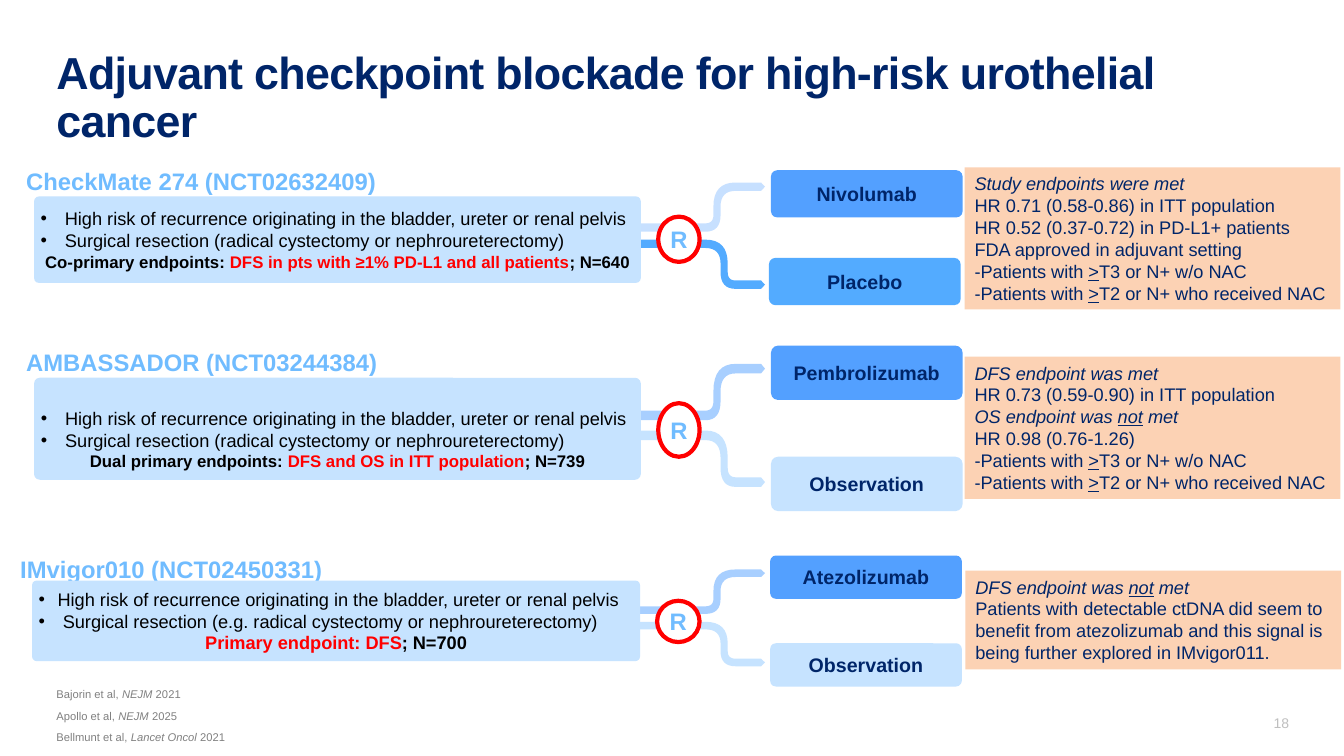
from dataclasses import dataclass

from pptx import Presentation
from pptx.dml.color import RGBColor
from pptx.enum import shapes, text
from pptx.oxml.ns import qn
from pptx.util import Cm, Pt
from lxml import etree


@dataclass(frozen=True)
class Theme:
    font: str = "Arial"
    navy: str = "002569"
    sky: str = "70BCFF"
    blue: str = "53A0FF"
    azure: str = "53ABFF"
    pale: str = "C6E3FF"
    peach: str = "FCD2B4"
    red: str = "FF0000"
    black: str = "000000"
    white: str = "FFFFFF"
    grey: str = "808080"
    silver: str = "BFBFBF"
    title: float = 32
    heading: float = 17
    arm: float = 14
    body: float = 13
    endpoint: float = 12
    number: float = 10
    reference: float = 8


T = Theme()
ALIGN = text.PP_ALIGN
ANCHOR = text.MSO_ANCHOR

RISK = "High risk of recurrence originating in the bladder, ureter or renal pelvis"
SURGERY = "Surgical resection (radical cystectomy or nephroureterectomy)"
STAGES = [["-Patients with ", (">", "u"), "T3 or N+ w/o NAC"],
          ["-Patients with ", (">", "u"), "T2 or N+ who received NAC"]]

# Lengths in cm; an arm is (name, x, y, colour), an arrow is (top, colour, alpha)
TRIALS = [
    dict(heading=("CheckMate 274 (NCT02632409)", 0.66, 4.04),
         box=(0.86, 4.95, 15.29, 2.18), box_top=0.15,
         bullets=[(RISK, 0.61), (SURGERY, 0.61)],
         endpoint=[("Co-primary endpoints: ", "b"),
                   ("DFS in pts with ≥1% PD-L1 and all patients", "br"), ("; N=640", "b")],
         endpoint_size=T.endpoint, arm_h=1.19,
         arms=[("Nivolumab", 19.43, 4.29, T.blue), ("Placebo", 19.38, 6.5, T.azure)],
         arrow_h=1.24, up=(4.6, T.blue, 32), down=(6.04, T.azure, 100),
         circle=(16.59, 5.46, 1.04, 1.14), result=(24.31, 4.22, 9.47, 3.58),
         findings=[[("Study endpoints were met", "i")],
                   ["HR 0.71 (0.58-0.86) in ITT population"],
                   ["HR 0.52 (0.37-0.72) in PD-L1+ patients"],
                   ["FDA approved in adjuvant setting"], *STAGES]),
    dict(heading=("AMBASSADOR (NCT03244384)", 0.66, 8.61),
         box=(0.86, 9.52, 15.29, 2.57), box_top=0.68,
         bullets=[(RISK, 0.61), (SURGERY, 0.61)],
         endpoint=[("Dual primary endpoints: ", "b"),
                   ("DFS and OS in ITT population", "br"), ("; N=739", "b")],
         endpoint_size=T.endpoint, arm_h=1.37,
         arms=[("Pembrolizumab", 19.43, 8.71, T.blue), ("Observation", 19.43, 11.51, T.pale)],
         arrow_h=1.42, up=(9.17, T.blue, 50), down=(10.85, T.pale, 100),
         circle=(16.59, 10.16, 1.04, 1.35), result=(24.31, 8.99, 9.47, 3.58),
         findings=[[("DFS endpoint was met", "i")],
                   ["HR 0.73 (0.59-0.90) in ITT population"],
                   [("OS endpoint was ", "i"), ("not", "iu"), (" met", "i")],
                   ["HR 0.98 (0.76-1.26)"], *STAGES]),
    dict(heading=("IMvigor010 (NCT02450331)", 0.51, 13.82),
         box=(0.81, 14.63, 15.32, 2.03), box_top=0.15,
         bullets=[(RISK, 0.48),
                  ("Surgical resection (e.g. radical cystectomy or nephroureterectomy)", 0.61)],
         endpoint=[("Primary endpoint: DFS", "br"), ("; N=700", "b")],
         endpoint_size=T.body, arm_h=1.09,
         arms=[("Atezolizumab", 19.41, 14.0, T.blue), ("Observation", 19.41, 16.21, T.pale)],
         arrow_h=1.12, up=(14.35, T.blue, 50), down=(15.67, T.pale, 100),
         circle=(16.56, 15.14, 1.07, 1.04), result=(24.33, 14.38, 9.47, 2.49),
         findings=[[("DFS endpoint was ", "i"), ("not", "iu"), (" met", "i")],
                   ["Patients with detectable ctDNA did seem to"],
                   ["benefit from atezolizumab and this signal is"],
                   ["being further explored in IMvigor011."]]),
]
REFERENCES = [("Bajorin et al, ", "NEJM", " 2021"), ("Apollo et al, ", "NEJM", " 2025"),
              ("Bellmunt et al, ", "Lancet Oncol", " 2021")]


# Text helpers
def set_frame(tf, anchor=ANCHOR.TOP, insets=(0, 0, 0, 0)):
    tf.word_wrap = True
    tf.auto_size = text.MSO_AUTO_SIZE.NONE
    tf.vertical_anchor = anchor
    tf.margin_left, tf.margin_top, tf.margin_right, tf.margin_bottom = map(Cm, insets)


def set_bullet(p, indent):
    """Hang a bullet by indent; an indent of 0 removes the bullet."""
    pPr = p._p.get_or_add_pPr()
    pPr.set("marL", str(Cm(indent)))
    pPr.set("indent", str(-Cm(indent)))
    if indent:
        clr = etree.SubElement(pPr, qn("a:buClr"))
        etree.SubElement(clr, qn("a:srgbClr")).set("val", T.black)
        etree.SubElement(pPr, qn("a:buFont")).set("typeface", T.font)
        etree.SubElement(pPr, qn("a:buChar")).set("char", "•")
    else:
        etree.SubElement(pPr, qn("a:buNone"))


def write(p, runs, size, color, align=ALIGN.LEFT):
    """Runs are strings or (string, flags): b bold, i italic, u underline, r red."""
    p.alignment = align
    for run in runs:
        content, flags = (run, "") if isinstance(run, str) else run
        r = p.add_run()
        r.text = content
        f = r.font
        f.name, f.size = T.font, Pt(size)
        f.bold, f.italic, f.underline = "b" in flags, "i" in flags, "u" in flags
        f.color.rgb = RGBColor.from_string(T.red if "r" in flags else color)


def next_paragraph(tf, i):
    return tf.add_paragraph() if i else tf.paragraphs[0]


# Shape helpers
def paint(sp, fill, alpha=100):
    sp.shadow.inherit = False
    sp.fill.solid()
    sp.fill.fore_color.rgb = RGBColor.from_string(fill)
    sp.line.fill.background()
    if alpha < 100:
        clr = sp._element.spPr.find(qn("a:solidFill"))[0]
        etree.SubElement(clr, qn("a:alpha")).set("val", str(alpha * 1000))


def add_box(parent, kind, at, fill, adj=None):
    sp = parent.shapes.add_shape(kind, *map(Cm, at))
    paint(sp, fill)
    if adj is not None:
        sp.adjustments[0] = adj
    return sp


def add_label(parent, at, content, size, color, flags="", align=ALIGN.LEFT,
              anchor=ANCHOR.TOP, insets=(0, 0, 0, 0)):
    tf = parent.shapes.add_textbox(*map(Cm, at)).text_frame
    set_frame(tf, anchor, insets)
    write(tf.paragraphs[0], [(content, flags)], size, color, align)


def bend(start, corner, end, steps=8):
    """Points on a quadratic curve from start to end."""
    ts = [k / steps for k in range(steps + 1)]
    return [tuple((1 - t) ** 2 * a + 2 * t * (1 - t) * c + t * t * b
                  for a, c, b in zip(start, corner, end)) for t in ts]


def add_arrow(parent, top, height, color, alpha, rising):
    """S-shaped ribbon; v runs from the outer start edge to the outer end edge."""
    t = 0.17 * height
    left, a = (17.98, 0.34 * height) if rising else (18.16, 0.49 * height)
    right, b = left + 0.18, a + t
    x0, x1, x2, shoulder, tip = 15.32, 17.78, 18.54, 19.18, 19.28
    outline = [(x0, 0),
               *bend((x1, 0), (right, 0), (right, a)),
               *bend((right, b), (right, height - t), (x2, height - t)),
               (shoulder, height - t), (tip, height - t / 2), (shoulder, height),
               *bend((x2, height), (left, height), (left, b)),
               *bend((left, a), (left, t), (x1, t)),
               (x0, t)]
    pts = [(Cm(x), Cm(top + (height - v if rising else v))) for x, v in outline]
    fb = parent.shapes.build_freeform(*pts[0])
    fb.add_line_segments(pts[1:], close=True)
    paint(fb.convert_to_shape(), color, alpha)


# One trial: heading, arms, randomisation, criteria
def add_trial(s, trial):
    g = s.shapes.add_group_shape()
    name, x, y = trial["heading"]
    add_label(g, (x, y, 11.89, 0.95), name, T.heading, T.sky, "b", insets=(0, 0.15, 0, 0.15))

    for arm, x, y, color in trial["arms"]:
        sp = add_box(g, shapes.MSO_SHAPE.ROUNDED_RECTANGLE,
                     (x, y, 4.83, trial["arm_h"]), color, 0.132)
        set_frame(sp.text_frame, ANCHOR.MIDDLE, (0.3, 0.15, 0.3, 0.15))
        write(sp.text_frame.paragraphs[0], [(arm, "b")], T.arm, T.navy, ALIGN.CENTER)

    for key in ("up", "down"):
        top, color, alpha = trial[key]
        add_arrow(g, top, trial["arrow_h"], color, alpha, key == "up")

    sp = add_box(g, shapes.MSO_SHAPE.OVAL, trial["circle"], T.white)
    sp.line.color.rgb = RGBColor.from_string(T.red)
    sp.line.width = Pt(3)
    set_frame(sp.text_frame, ANCHOR.MIDDLE)
    sp.text_frame.word_wrap = False
    write(sp.text_frame.paragraphs[0], [("R", "b")], T.heading, T.sky, ALIGN.CENTER)

    sp = add_box(g, shapes.MSO_SHAPE.ROUNDED_RECTANGLE, trial["box"], T.pale, 0.056)
    tf = sp.text_frame
    set_frame(tf, ANCHOR.MIDDLE, (0.13, trial["box_top"], 0.13, 0.15))
    for i, (content, indent) in enumerate(trial["bullets"]):
        p = next_paragraph(tf, i)
        set_bullet(p, indent)
        write(p, [content], T.body, T.black)
    write(tf.add_paragraph(), trial["endpoint"], trial["endpoint_size"], T.black, ALIGN.CENTER)


def add_findings(s, trial):
    tf = add_box(s, shapes.MSO_SHAPE.RECTANGLE, trial["result"], T.peach).text_frame
    set_frame(tf, insets=(0.25, 0.13, 0.25, 0.13))
    for i, runs in enumerate(trial["findings"]):
        write(next_paragraph(tf, i), runs, T.body, T.navy)


# Placeholders
def place(sp, at, anchor):
    sp.left, sp.top, sp.width, sp.height = map(Cm, at)
    set_frame(sp.text_frame, anchor)
    return sp.text_frame


def add_title(s, content):
    p = place(s.shapes.title, (1.42, 1.27, 31.06, 2.54), ANCHOR.TOP).paragraphs[0]
    p.line_spacing = 0.9
    write(p, [(content, "b")], T.title, T.navy)
    p.runs[0].font._element.set("spc", "-50")


def add_references(s):
    tf = place(s.placeholders[1], (1.42, 18.06, 12.32, 0.69), ANCHOR.BOTTOM)
    for i, (authors, journal, year) in enumerate(REFERENCES):
        p = next_paragraph(tf, i)
        set_bullet(p, 0)
        p.space_before, p.space_after = Pt(0), Pt(6)
        write(p, [authors, (journal, "i"), year], T.reference, T.grey)


def main():
    prs = Presentation()
    prs.slide_width, prs.slide_height = Cm(33.87), Cm(19.05)
    s = prs.slides.add_slide(prs.slide_layouts[1])
    add_title(s, "Adjuvant checkpoint blockade for high-risk urothelial cancer")
    add_label(s, (31.22, 17.73, 1.27, 0.69), "18", T.number, T.silver,
              align=ALIGN.RIGHT, anchor=ANCHOR.BOTTOM)
    for trial in TRIALS:
        add_trial(s, trial)
    for trial in TRIALS:
        add_findings(s, trial)
    add_references(s)
    prs.save("out.pptx")


if __name__ == "__main__":
    main()
